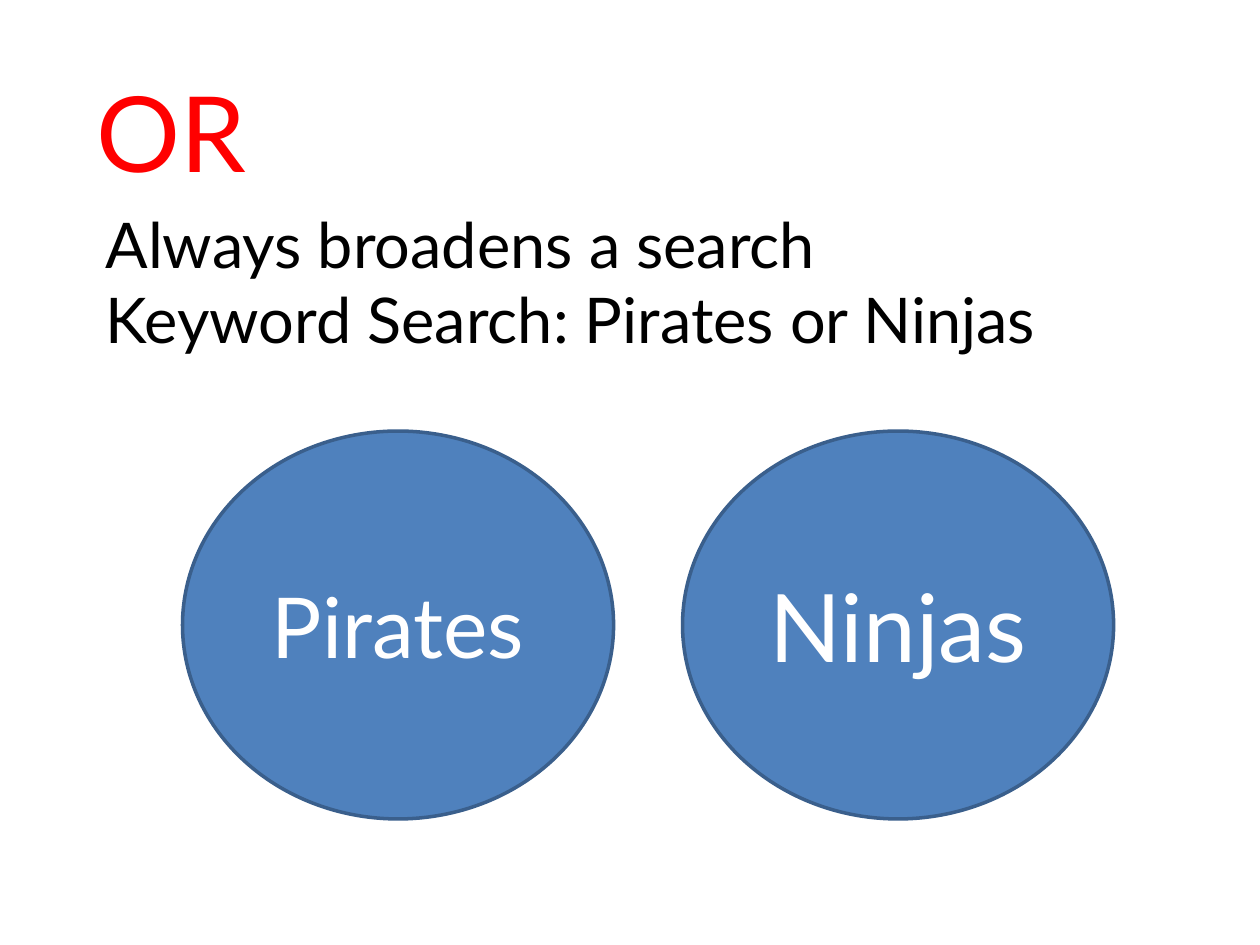
from pptx import Presentation
from pptx.dml.color import RGBColor
from pptx.enum.shapes import MSO_SHAPE
from pptx.enum.text import MSO_ANCHOR, PP_ALIGN
from pptx.util import Cm, Pt

RED = RGBColor(0xFF, 0x00, 0x00)
BLACK = RGBColor(0x00, 0x00, 0x00)
WHITE = RGBColor(0xFF, 0xFF, 0xFF)
BLUE = RGBColor(0x4F, 0x81, 0xBD)
DARK_BLUE = RGBColor(0x3A, 0x5F, 0x8C)


class SlideBuilder:
    """Holds the style and the current slide."""

    font_name = "Lato"

    def __init__(self, page):
        self.page = page

    def fill_text(self, frame, lines, size, color, align, anchor):
        frame.word_wrap = True
        frame.vertical_anchor = anchor
        for index, line in enumerate(lines):
            para = frame.paragraphs[0] if index == 0 else frame.add_paragraph()
            para.text = line
            para.alignment = align
            para.font.name = self.font_name
            para.font.size = Pt(size)
            para.font.color.rgb = color

    def text(self, lines, left, top, width, height, size, color,
             anchor=MSO_ANCHOR.TOP):
        box = self.page.shapes.add_textbox(
            Cm(left), Cm(top), Cm(width), Cm(height))
        self.fill_text(box.text_frame, lines, size, color, PP_ALIGN.LEFT, anchor)

    def ellipse(self, label, left, top, width, height, size):
        shape = self.page.shapes.add_shape(
            MSO_SHAPE.OVAL, Cm(left), Cm(top), Cm(width), Cm(height))
        shape.shadow.inherit = False
        shape.fill.solid()
        shape.fill.fore_color.rgb = BLUE
        shape.line.color.rgb = DARK_BLUE
        shape.line.width = Pt(2)
        self.fill_text(shape.text_frame, [label], size, WHITE,
                       PP_ALIGN.CENTER, MSO_ANCHOR.MIDDLE)


def main():
    deck = Presentation()
    deck.slide_width, deck.slide_height = Cm(25.4), Cm(19.05)
    builder = SlideBuilder(deck.slides.add_slide(deck.slide_layouts[6]))

    # Title and explanation
    builder.text(["OR"], 1.7, 1.27, 22.02, 2.74, 60, RED, MSO_ANCHOR.MIDDLE)
    builder.text(["Always broadens a search", "Keyword Search: Pirates or Ninjas"],
                 1.88, 4.01, 20.98, 3.33, 36, BLACK)

    # Two separate search sets
    first_left, step = 3.68, 10.08
    for index, (label, size) in enumerate([("Pirates", 48), ("Ninjas", 54)]):
        builder.ellipse(label, first_left + index * step, 8.69, 8.69, 7.82, size)

    deck.save("out.pptx")


if __name__ == "__main__":
    main()
